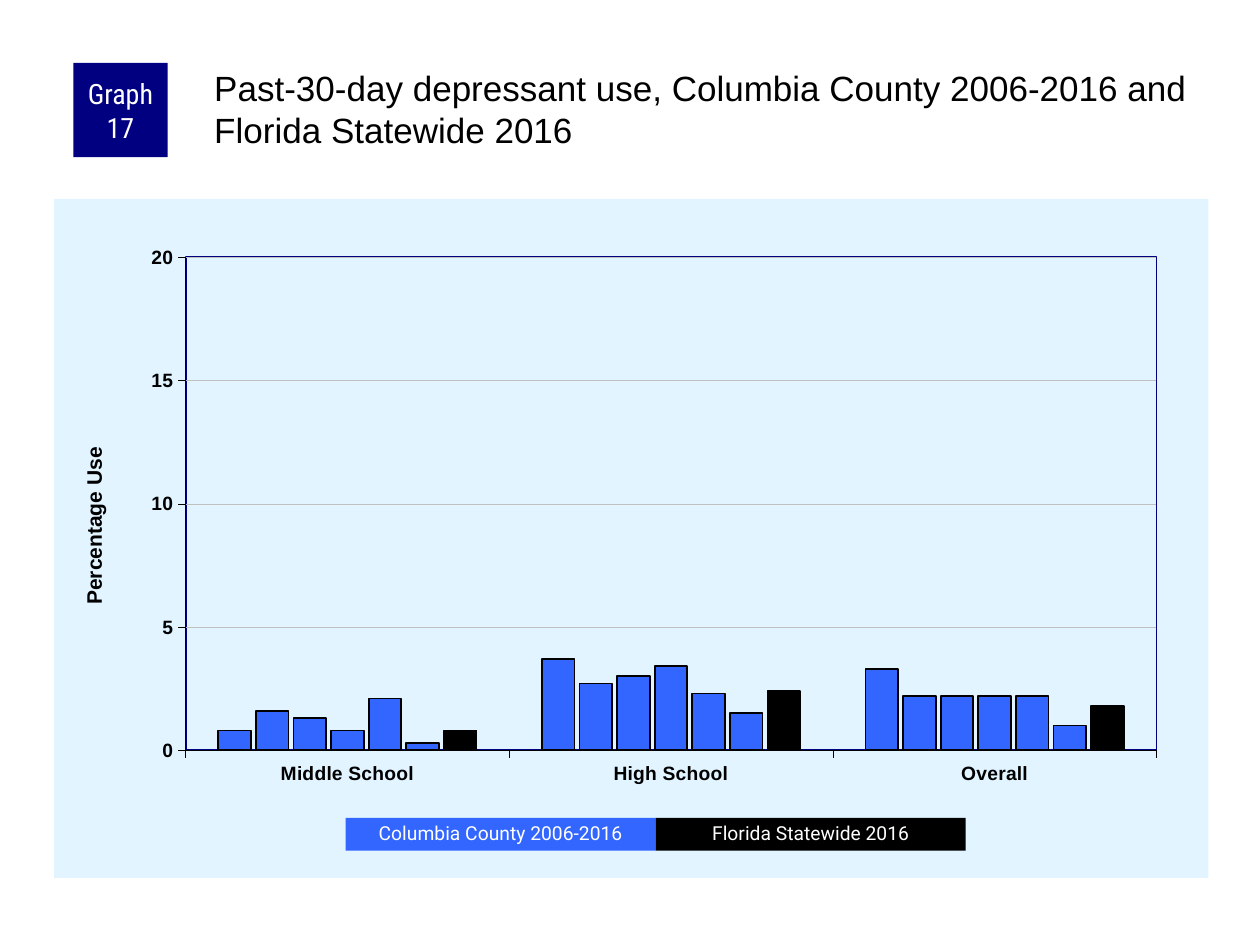
from lxml import etree
from pptx import Presentation
from pptx.chart.data import CategoryChartData
from pptx.dml.color import RGBColor
from pptx.enum.chart import XL_CHART_TYPE as CT, XL_TICK_MARK as TM
from pptx.enum.shapes import MSO_SHAPE as SH
from pptx.enum.text import MSO_ANCHOR as MA, PP_ALIGN as AL
from pptx.oxml import parse_xml
from pptx.oxml.ns import nsdecls
from pptx.util import Cm, Pt

COLORS = {"navy": "000080", "blue": "3366FF", "black": "000000",
          "white": "FFFFFF", "panel": "E1F4FF", "grid": "C0C0C0"}


def style_font(font, name, size, color, bold=False):
    font.name, font.size, font.bold = name, Pt(size), bold
    font.color.rgb = RGBColor.from_string(COLORS[color])


def layout_xml(x, y, w=None, h=None):
    target = '<c:layoutTarget val="inner"/>' if w else ""
    size = f'<c:w val="{w}"/><c:h val="{h}"/>' if w else ""
    return parse_xml(
        f'<c:layout {nsdecls("c")}><c:manualLayout>{target}'
        '<c:xMode val="edge"/><c:yMode val="edge"/>'
        f'<c:x val="{x}"/><c:y val="{y}"/>{size}</c:manualLayout></c:layout>')


prs = Presentation()
prs.slide_width, prs.slide_height = Cm(25.4), Cm(19.05)
s = prs.slides.add_slide(prs.slide_layouts[6])

data = CategoryChartData()
data.categories = ["Middle School", "High School", "Overall"]
values = [(0.8, 3.7, 3.3), (1.6, 2.7, 2.2), (1.3, 3, 2.2), (0.8, 3.4, 2.2),
          (2.1, 2.3, 2.2), (0.3, 1.5, 1), (0.8, 2.4, 1.8)]
for i, row in enumerate(values, 1):
    data.add_series(f"Series {i}", row)
chart = s.shapes.add_chart(CT.COLUMN_CLUSTERED, Cm(1.09), Cm(4.01),
                           Cm(23.27), Cm(13.69), data).chart
chart.has_legend = chart.has_title = False
style_font(chart.font, "Arial", 8, "black")

plot = chart.plots[0]
plot.gap_width, plot.overlap, plot.vary_by_categories = 200, -15, False
for i, series in enumerate(plot.series, 1):
    fill, line = series.format.fill, series.format.line
    fill.solid()
    fill.fore_color.rgb = RGBColor.from_string(
        COLORS["black" if i == len(values) else "blue"])
    line.color.rgb = RGBColor.from_string(COLORS["black"])
    line.width = Pt(1)
    series.invert_if_negative = False

cat, val = chart.category_axis, chart.value_axis
for axis in (cat, val):
    axis.major_tick_mark, axis.minor_tick_mark = TM.OUTSIDE, TM.NONE
    style_font(axis.tick_labels.font, "Arial", 11, "black", True)
    axis.format.line.color.rgb = RGBColor.from_string(COLORS["black"])
    axis.format.line.width = Pt(0.25)
val.minimum_scale, val.maximum_scale, val.major_unit = 0, 20, 5
val.tick_labels.number_format = "0"
val.tick_labels.number_format_is_linked = False
grid = val.major_gridlines.format.line
grid.color.rgb = RGBColor.from_string(COLORS["grid"])
grid.width = Pt(0.25)
title = val.axis_title
p = title.text_frame.paragraphs[0]
p.text = "Percentage Use"
style_font(p.font, "Arial", 12, "black", True)
title.text_frame._txBody.bodyPr.set("rot", "-5400000")
title.text_frame._txBody.bodyPr.set("vert", "horz")

C = "{http://schemas.openxmlformats.org/drawingml/2006/chart}"
space = chart._chartSpace
area = space.find(f".//{C}plotArea")
for parent, index, layout in [(area, 0, layout_xml(0.114, 0.086, 0.841, 0.726)),
                              (title._element, 1, layout_xml(0.02, 0.36))]:
    for old in parent.findall(f"{C}layout"):
        parent.remove(old)
    parent.insert(index, layout)
area.append(parse_xml(
    f'<c:spPr {nsdecls("c", "a")}><a:noFill/><a:ln w="12700"><a:solidFill>'
    f'<a:srgbClr val="{COLORS["navy"]}"/></a:solidFill></a:ln></c:spPr>'))
space.find(f"{C}chart").addnext(parse_xml(
    f'<c:spPr {nsdecls("c", "a")}><a:solidFill><a:srgbClr val="{COLORS["panel"]}"/>'
    '</a:solidFill><a:ln><a:noFill/></a:ln></c:spPr>'))

boxes = [
    ("Graph 17", 1.48, 1.27, 1.9, 1.9, "navy", "Roboto Condensed", 16, 1, 0.13, 0),
    ("Columbia County 2006-2016", 6.97, 16.49, 6.25, 0.66, "blue", "Roboto", 11, 0.9, 0.25, 0.13),
    ("Florida Statewide 2016", 13.22, 16.49, 6.25, 0.66, "black", "Roboto", 11, 0.9, 0.25, 0.13),
]
for text, x, y, w, h, color, font, size, spacing, side, edge in boxes:
    sp = s.shapes.add_shape(SH.RECTANGLE, Cm(x), Cm(y), Cm(w), Cm(h))
    sp.shadow.inherit = False
    sp.fill.solid()
    sp.fill.fore_color.rgb = RGBColor.from_string(COLORS[color])
    sp.line.fill.background()
    tf = sp.text_frame
    tf.word_wrap, tf.vertical_anchor = True, MA.MIDDLE
    tf.margin_left = tf.margin_right = Cm(side)
    tf.margin_top = tf.margin_bottom = Cm(edge)
    p = tf.paragraphs[0]
    p.text, p.alignment, p.line_spacing = text, AL.CENTER, spacing
    style_font(p.font, font, size, "white")

tf = s.shapes.add_textbox(Cm(4.24), Cm(1.27), Cm(20.12), Cm(2.11)).text_frame
tf.word_wrap = True
tf.margin_left = tf.margin_top = Cm(0.08)
tf.margin_right = tf.margin_bottom = 0
p = tf.paragraphs[0]
p.text = "Past-30-day depressant use, Columbia County 2006-2016 and Florida Statewide 2016"
style_font(p.font, "Arial", 20, "black")

prs.save("out.pptx")
